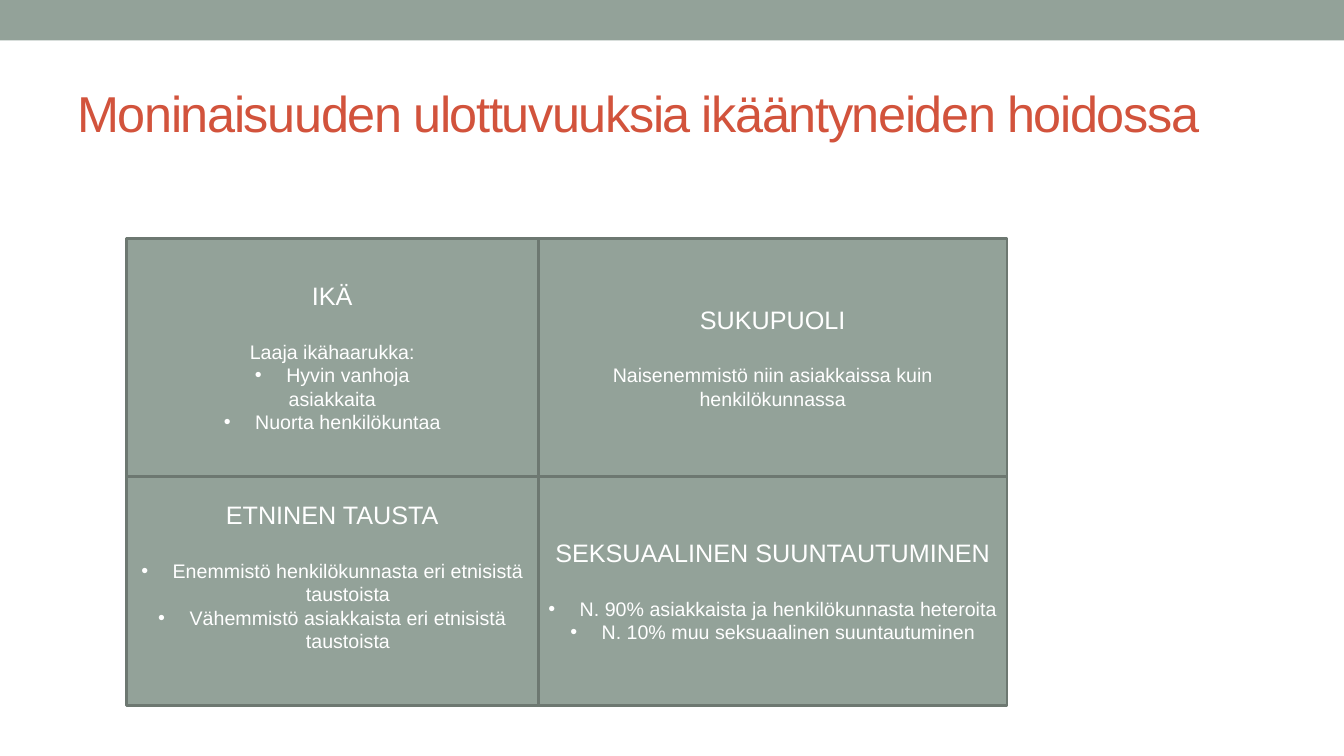
from dataclasses import dataclass

from lxml.etree import SubElement
from pptx import Presentation
from pptx.dml.color import RGBColor
from pptx.enum.shapes import MSO_SHAPE as Shape
from pptx.enum.text import MSO_ANCHOR as Anchor, PP_ALIGN as Align
from pptx.oxml.ns import qn
from pptx.util import Cm, Pt


@dataclass(frozen=True)
class Theme:
    font: str = "Arial"
    sage: RGBColor = RGBColor(0x93, 0xA2, 0x99)
    border: RGBColor = RGBColor(0x6D, 0x78, 0x71)
    red: RGBColor = RGBColor(0xD2, 0x53, 0x3C)
    white: RGBColor = RGBColor(0xFF, 0xFF, 0xFF)
    title_size: Pt = Pt(36)
    heading_size: Pt = Pt(18)
    body_size: Pt = Pt(14)
    heading_gap: Pt = Pt(20.7)
    border_width: Pt = Pt(2.08)
    bullet_indent: Cm = Cm(0.79)


THEME = Theme()
SLIDE_WIDTH, SLIDE_HEIGHT = Cm(33.87), Cm(19.05)
COLUMN_WIDTHS = Cm(10.39), Cm(11.81)
ROW_HEIGHTS = Cm(6), Cm(5.77)

# Each quadrant: heading, lines as (text, bulleted), extra space below the text
QUADRANTS = [
    [
        ("IKÄ", [("Laaja ikähaarukka:", False), ("Hyvin vanhoja", True),
                 ("asiakkaita", False), ("Nuorta henkilökuntaa", True)], 0),
        ("SUKUPUOLI",
         [("Naisenemmistö niin asiakkaissa kuin henkilökunnassa", False)], 0),
    ],
    [
        ("ETNINEN TAUSTA",
         [("Enemmistö henkilökunnasta eri etnisistä taustoista", True),
          ("Vähemmistö asiakkaista eri etnisistä taustoista", True)],
         THEME.heading_gap),
        ("SEKSUAALINEN SUUNTAUTUMINEN",
         [("N. 90% asiakkaista ja henkilökunnasta heteroita", True),
          ("N. 10% muu seksuaalinen suuntautuminen", True)], 0),
    ],
]


def style_text(paragraph, text, size, color):
    paragraph.text = text
    font = paragraph.font
    font.name, font.size, font.color.rgb = THEME.font, size, color


def add_bullet(paragraph):
    properties = paragraph._p.get_or_add_pPr()
    properties.set("marL", str(THEME.bullet_indent))
    properties.set("indent", str(-THEME.bullet_indent))
    bullet_font = SubElement(properties, qn("a:buFont"))
    bullet_font.set("typeface", THEME.font)
    SubElement(properties, qn("a:buChar")).set("char", "•")


def add_panel(slide, left, top, width, height):
    shape = slide.shapes.add_shape(Shape.RECTANGLE, left, top, width, height)
    shape.shadow.inherit = False
    shape.fill.solid()
    shape.fill.fore_color.rgb = THEME.sage
    shape.line.fill.background()
    return shape


def add_title(slide, left, top, width, height):
    frame = slide.shapes.add_textbox(left, top, width, height).text_frame
    frame.word_wrap = True
    frame.vertical_anchor = Anchor.MIDDLE
    paragraph = frame.paragraphs[0]
    style_text(paragraph, "Moninaisuuden ulottuvuuksia ikääntyneiden hoidossa",
               THEME.title_size, THEME.red)
    paragraph.runs[0].font._element.set("spc", "-100")


def add_quadrant(slide, left, top, width, height, heading, lines, space_below):
    shape = add_panel(slide, left, top, width, height)
    shape.line.color.rgb = THEME.border
    shape.line.width = THEME.border_width
    frame = shape.text_frame
    frame.word_wrap = True
    frame.vertical_anchor = Anchor.MIDDLE
    frame.margin_bottom += space_below

    paragraph = frame.paragraphs[0]
    paragraph.alignment = Align.CENTER
    paragraph.space_after = THEME.heading_gap
    style_text(paragraph, heading, THEME.heading_size, THEME.white)
    for text, bulleted in lines:
        paragraph = frame.add_paragraph()
        paragraph.alignment = Align.CENTER
        if bulleted:
            add_bullet(paragraph)
        style_text(paragraph, text, THEME.body_size, THEME.white)


def add_matrix(slide, left, top, widths, heights):
    for row, height in zip(QUADRANTS, heights):
        x = left
        for quadrant, width in zip(row, widths):
            add_quadrant(slide, x, top, width, height, *quadrant)
            x += width
        top += height


def main():
    presentation = Presentation()
    presentation.slide_width = SLIDE_WIDTH
    presentation.slide_height = SLIDE_HEIGHT
    slide = presentation.slides.add_slide(presentation.slide_layouts[6])
    add_panel(slide, 0, 0, SLIDE_WIDTH, Cm(1.02))
    add_title(slide, Cm(1.7), Cm(1.47), Cm(30.48), Cm(2.74))
    add_matrix(slide, Cm(3.18), Cm(6), COLUMN_WIDTHS, ROW_HEIGHTS)
    presentation.save("out.pptx")


if __name__ == "__main__":
    main()
